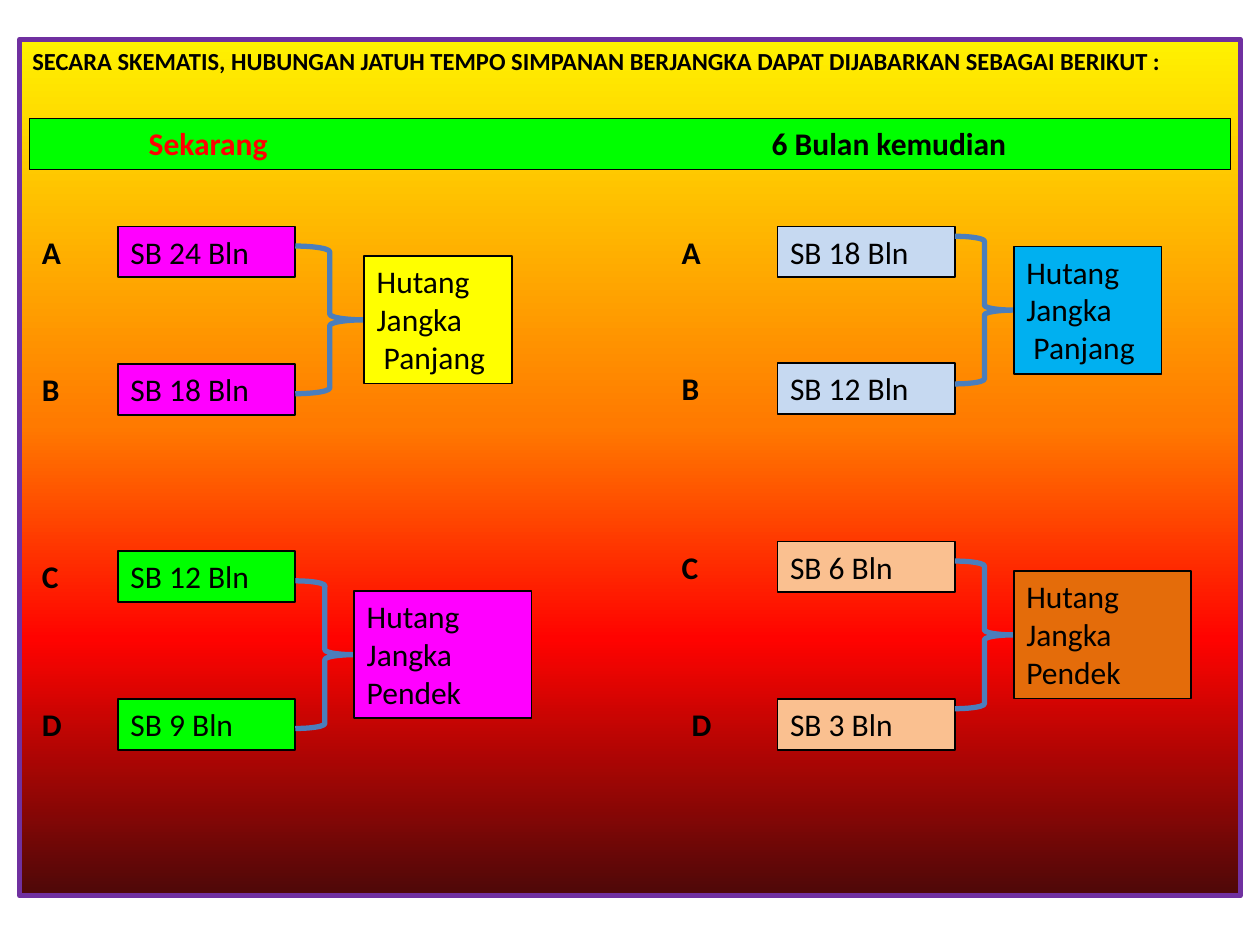
from lxml import etree
from pptx import Presentation
from pptx import util as u
from pptx.dml.color import RGBColor
from pptx.enum import shapes, text
from pptx.oxml.ns import qn

COLORS = {
    "black": "000000", "red": "FF0000", "lime": "00FF00", "magenta": "FF00FF",
    "yellow": "FFFF00", "sky": "00B0F0", "pale_blue": "C6D9F1",
    "peach": "FAC090", "orange": "E46C0A", "purple": "7030A0", "brace": "4B7EBC",
}
BACKDROP = [(0, "FFF200"), (45, "FF7A00"), (70, "FF0300"), (100, "4D0808")]
BODY = {"name": "Calibri", "size": u.Pt(18), "bold": False}
BOLD = {**BODY, "bold": True}
HEADING = {**BOLD, "size": u.Pt(14)}
FRAME = {"word_wrap": True, "vertical_anchor": text.MSO_ANCHOR.TOP,
         "auto_size": text.MSO_AUTO_SIZE.SHAPE_TO_FIT_TEXT}
LONG_TERM = ["Hutang", "Jangka", " Panjang"]
SHORT_TERM = ["Hutang", "Jangka", "Pendek"]
BOX_WIDTH, BOX_HEIGHT, GROUP_HEIGHT, BRACE_HEIGHT = 101.25, 29, 72.7, 84.4


def color(name):
    return RGBColor.from_string(COLORS[name])


class SlideBuilder:
    def __init__(self, slide):
        self.slide = slide

    def add_run(self, paragraph, content, style, ink="black"):
        run = paragraph.add_run()
        run.text = content
        for name, value in style.items():
            setattr(run.font, name, value)
        run.font.color.rgb = color(ink)

    def fill_frame(self, frame, lines, style):
        for name, value in FRAME.items():
            setattr(frame, name, value)
        for number, line in enumerate(lines):
            paragraph = frame.add_paragraph() if number else frame.paragraphs[0]
            paragraph.alignment = text.PP_ALIGN.LEFT
            if line:
                self.add_run(paragraph, line, style)

    def outline(self, shape, ink, width):
        shape.line.color.rgb = color(ink)
        shape.line.width = u.Pt(width)

    def backdrop(self, content, *place):
        shape = self.slide.placeholders[1]
        shape.left, shape.top, shape.width, shape.height = map(u.Pt, place)
        self.outline(shape, "purple", 3)
        shape.fill.gradient()
        shape.fill.gradient_angle = 270
        stops = shape.element.spPr.find(qn("a:gradFill")).find(qn("a:gsLst"))
        for stop in list(stops):
            stops.remove(stop)
        for position, value in BACKDROP:
            stop = etree.SubElement(stops, qn("a:gs"), pos=str(position * 1000))
            etree.SubElement(stop, qn("a:srgbClr"), val=value)
        paragraph = shape.text_frame.paragraphs[0]
        paragraph.space_before = u.Pt(2.8)
        properties = paragraph._p.get_or_add_pPr()
        properties.set("marL", str(u.Pt(27)))
        properties.set("indent", str(u.Pt(-27)))
        etree.SubElement(properties, qn("a:buNone"))
        self.add_run(paragraph, content, HEADING)

    def box(self, lines, fill, left, top, width, height, border=1):
        shape = self.slide.shapes.add_shape(
            shapes.MSO_SHAPE.RECTANGLE, *map(u.Pt, (left, top, width, height)))
        shape.shadow.inherit = False
        shape.fill.solid()
        shape.fill.fore_color.rgb = color(fill)
        self.outline(shape, "black", border)
        self.fill_frame(shape.text_frame, lines, BODY)
        return shape

    def header(self, entries, *place):
        shape = self.box([""], "lime", *place, border=0.25)
        paragraph = shape.text_frame.paragraphs[0]
        tabs = etree.SubElement(paragraph._p.get_or_add_pPr(), qn("a:tabLst"))
        for content, ink, position in entries:
            etree.SubElement(tabs, qn("a:tab"), pos=str(u.Pt(position)), algn="l")
            self.add_run(paragraph, "\t" + content, BOLD, ink)

    def brace(self, *place):
        shape = self.slide.shapes.add_shape(
            shapes.MSO_SHAPE.RIGHT_BRACE, *map(u.Pt, place))
        shape.shadow.inherit = False
        shape.fill.background()
        self.outline(shape, "brace", 3)

    def label(self, content, *place):
        shape = self.slide.shapes.add_textbox(*map(u.Pt, place))
        self.fill_frame(shape.text_frame, [content], BOLD)


def main():
    presentation = Presentation()
    presentation.slide_width, presentation.slide_height = u.Pt(720), u.Pt(540)
    slide = presentation.slides.add_slide(presentation.slide_layouts[1])
    title = slide.shapes.title.element
    title.getparent().remove(title)
    builder = SlideBuilder(slide)

    # Backdrop with heading, and the header band
    builder.backdrop(
        "SECARA SKEMATIS, HUBUNGAN JATUH TEMPO SIMPANAN BERJANGKA "
        "DAPAT DIJABARKAN SEBAGAI BERIKUT :", 11.25, 22.5, 697.5, 489.4)
    builder.header([("Sekarang", "red", 61), ("6 Bulan kemudian", "black", 417)],
                   16.9, 67.5, 686.2, 29)

    # Deposits: letter, label left, box left, top, term, fill
    deposits = [
        ("A", 16.9, 67.5, 129.4, "SB 24 Bln", "magenta"),
        ("B", 16.9, 67.5, 208.1, "SB 18 Bln", "magenta"),
        ("C", 16.9, 67.5, 315, "SB 12 Bln", "lime"),
        ("D", 16.9, 67.5, 399.4, "SB 9 Bln", "lime"),
        ("A", 382.5, 444.4, 129.4, "SB 18 Bln", "pale_blue"),
        ("B", 382.5, 444.4, 207.5, "SB 12 Bln", "pale_blue"),
        ("C", 382.5, 444.4, 309.4, "SB 6 Bln", "peach"),
        ("D", 388.1, 444.4, 399.4, "SB 3 Bln", "peach"),
    ]
    for letter, label_left, box_left, top, term, fill in deposits:
        builder.label(letter, label_left, top, 36, BOX_HEIGHT)
        builder.box([term], fill, box_left, top, BOX_WIDTH, BOX_HEIGHT)

    # Debt groups: each brace points at the middle of its box
    groups = [
        (LONG_TERM, "yellow", 168.75, 140.6, 39.4, 84.4),
        (SHORT_TERM, "magenta", 168.75, 331.9, 33.75, BOX_WIDTH),
        (LONG_TERM, "sky", 545.65, 135, 33.75, 84.4),
        (SHORT_TERM, "orange", 545.65, 320.6, 33.75, BOX_WIDTH),
    ]
    for lines, fill, left, top, brace_width, width in groups:
        builder.brace(left, top, brace_width, BRACE_HEIGHT)
        builder.box(lines, fill, left + brace_width,
                    top + (BRACE_HEIGHT - GROUP_HEIGHT) / 2, width, GROUP_HEIGHT)

    presentation.save("out.pptx")


if __name__ == "__main__":
    main()
